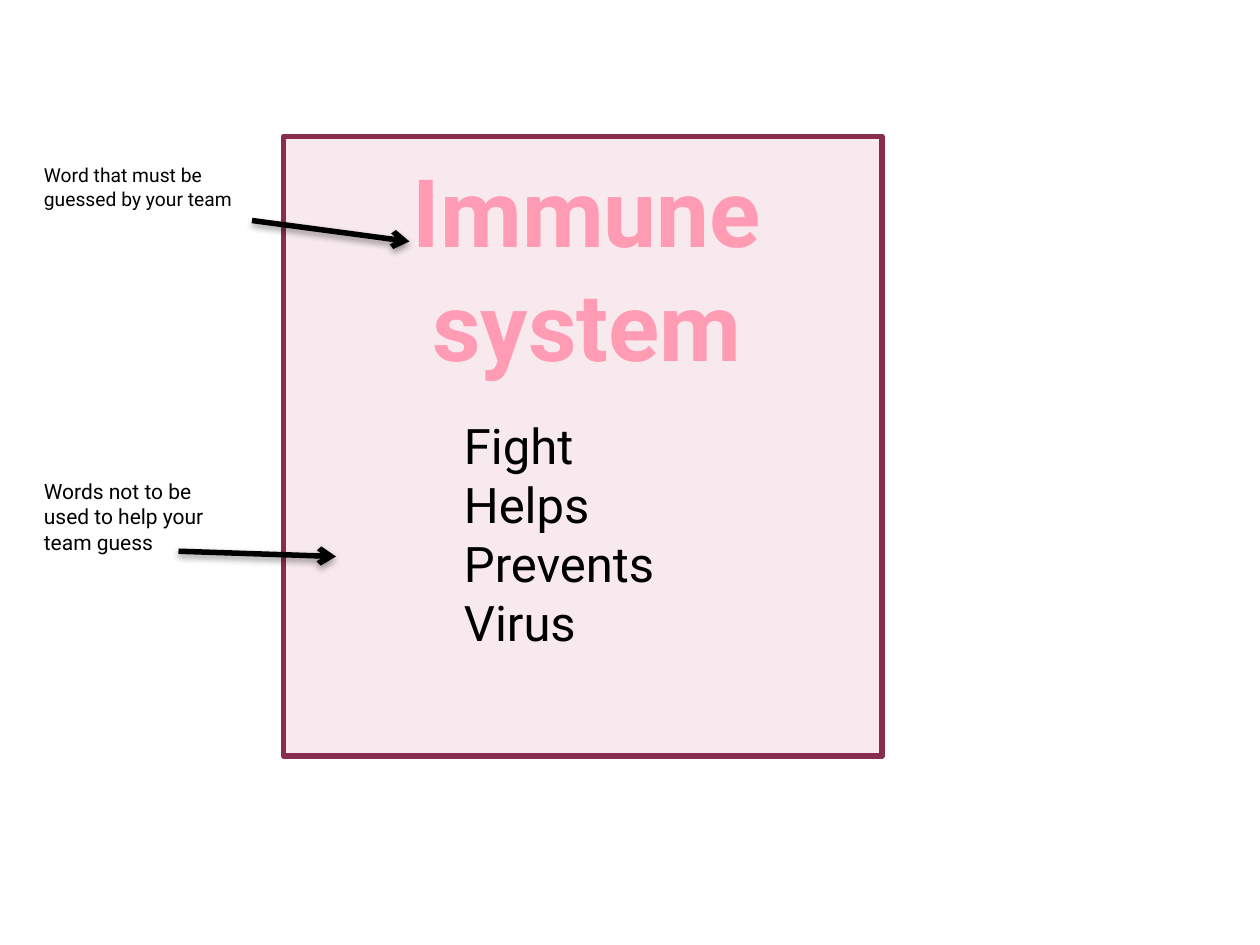
"""Build a word-guessing game card about the immune system."""
from dataclasses import dataclass

from lxml.etree import SubElement
from pptx import Presentation
from pptx.dml.color import RGBColor
from pptx.enum.shapes import MSO_CONNECTOR, MSO_SHAPE
from pptx.enum.text import MSO_ANCHOR, MSO_AUTO_SIZE, PP_ALIGN
from pptx.oxml.ns import qn
from pptx.util import Inches, Pt

COLUMNS, ROWS = 120, 90
SLIDE_WIDTH, SLIDE_HEIGHT = Inches(10), Inches(7.5)
FONT = "Roboto"
LINE_WIDTH = Pt(3.15)
BLACK = RGBColor(0x00, 0x00, 0x00)
CARD_TINT = RGBColor(0xB8, 0x3D, 0x68)
CARD_BORDER = RGBColor(0x88, 0x2D, 0x4D)
PINK = RGBColor(0xFF, 0x9B, 0xB2)


@dataclass(frozen=True)
class Area:
    column: float
    row: float
    columns: float
    rows: float

    def bounds(self) -> tuple[int, int, int, int]:
        return (across(self.column), down(self.row),
                across(self.columns), down(self.rows))


@dataclass(frozen=True)
class Wording:
    area: Area
    lines: tuple[str, ...]
    size: int


@dataclass(frozen=True)
class Pointer:
    start: tuple[float, float]
    end: tuple[float, float]


CARD = Area(27, 13, 57, 59)
SECRET_WORD = Wording(Area(24.8, 14, 62.2, 23), ("Immune system",), 54)
WORDINGS = (
    Wording(Area(43, 39, 22, 29.5), ("Fight", "Helps", "Prevents", "Virus"), 28),
    Wording(Area(3, 15, 21, 5.6), ("Word that must be guessed by your team",), 11),
    Wording(Area(3, 45, 21, 8.5), ("Words not to be used to help your team guess",), 12),
)
POINTERS = (
    Pointer((24, 21), (39, 23)),
    Pointer((17, 52.5), (32, 53)),
)


def across(columns: float) -> int:
    return round(SLIDE_WIDTH * columns / COLUMNS)


def down(rows: float) -> int:
    return round(SLIDE_HEIGHT * rows / ROWS)


def write(shape, wording: Wording, color=BLACK, bold=False, align=PP_ALIGN.LEFT) -> None:
    frame = shape.text_frame
    frame.text = "\n".join(wording.lines)
    frame.word_wrap = True
    frame.auto_size = MSO_AUTO_SIZE.NONE
    frame.vertical_anchor = MSO_ANCHOR.TOP
    for paragraph in frame.paragraphs:
        paragraph.alignment = align
        paragraph.font.name = FONT
        paragraph.font.size = Pt(wording.size)
        paragraph.font.bold = bold
        paragraph.font.color.rgb = color


def add_card(slide):
    card = slide.shapes.add_shape(MSO_SHAPE.RECTANGLE, *CARD.bounds())
    card.shadow.inherit = False
    card.fill.solid()
    card.fill.fore_color.rgb = CARD_TINT
    tint = card.element.spPr.find(qn("a:solidFill")).find(qn("a:srgbClr"))
    SubElement(tint, qn("a:alpha"), val="11000")
    card.line.color.rgb = CARD_BORDER
    card.line.width = LINE_WIDTH
    SubElement(card.line._get_or_add_ln(), qn("a:round"))
    return card


def add_title(slide, card) -> None:
    title = slide.shapes.title
    title.left, title.top, title.width, title.height = SECRET_WORD.area.bounds()
    write(title, SECRET_WORD, PINK, True, PP_ALIGN.CENTER)
    title.element.addprevious(card.element)


def add_pointer(slide, pointer: Pointer) -> None:
    (start_column, start_row), (end_column, end_row) = pointer.start, pointer.end
    arrow = slide.shapes.add_connector(
        MSO_CONNECTOR.STRAIGHT, across(start_column), down(start_row),
        across(end_column), down(end_row))
    arrow.line.color.rgb = BLACK
    arrow.line.width = LINE_WIDTH
    SubElement(arrow.line._get_or_add_ln(), qn("a:tailEnd"), type="arrow")
    effects = SubElement(arrow._element.spPr, qn("a:effectLst"))
    shadow = SubElement(effects, qn("a:outerShdw"), blurRad=str(Pt(4)),
                        dist=str(Pt(2)), dir="5400000", rotWithShape="0")
    shade = SubElement(shadow, qn("a:srgbClr"), val=str(BLACK))
    SubElement(shade, qn("a:alpha"), val="38000")


def main() -> None:
    presentation = Presentation()
    presentation.slide_width, presentation.slide_height = SLIDE_WIDTH, SLIDE_HEIGHT
    slide = presentation.slides.add_slide(presentation.slide_layouts[5])
    add_title(slide, add_card(slide))
    for wording in WORDINGS:
        write(slide.shapes.add_textbox(*wording.area.bounds()), wording)
    for pointer in POINTERS:
        add_pointer(slide, pointer)
    presentation.save("out.pptx")


if __name__ == "__main__":
    main()
